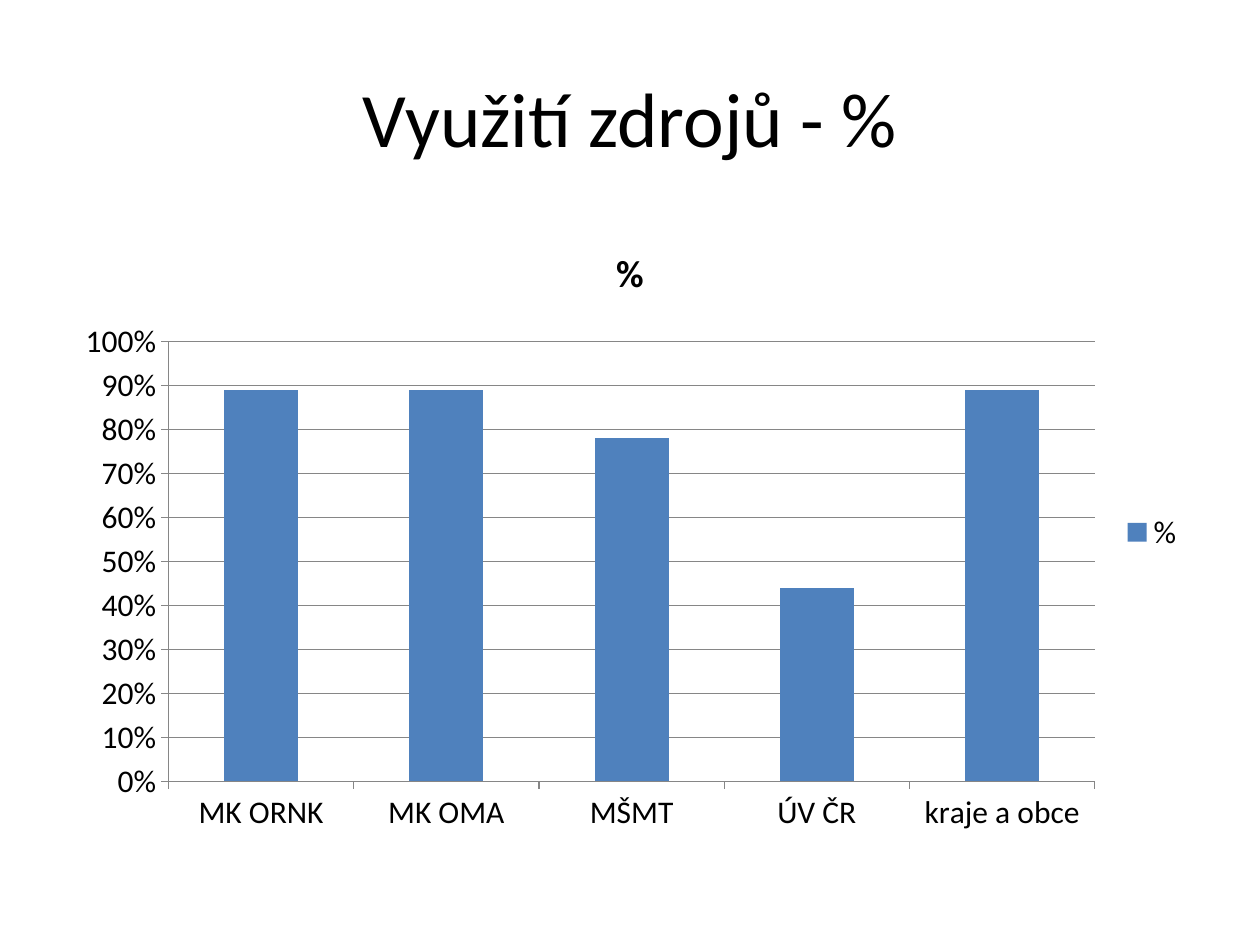
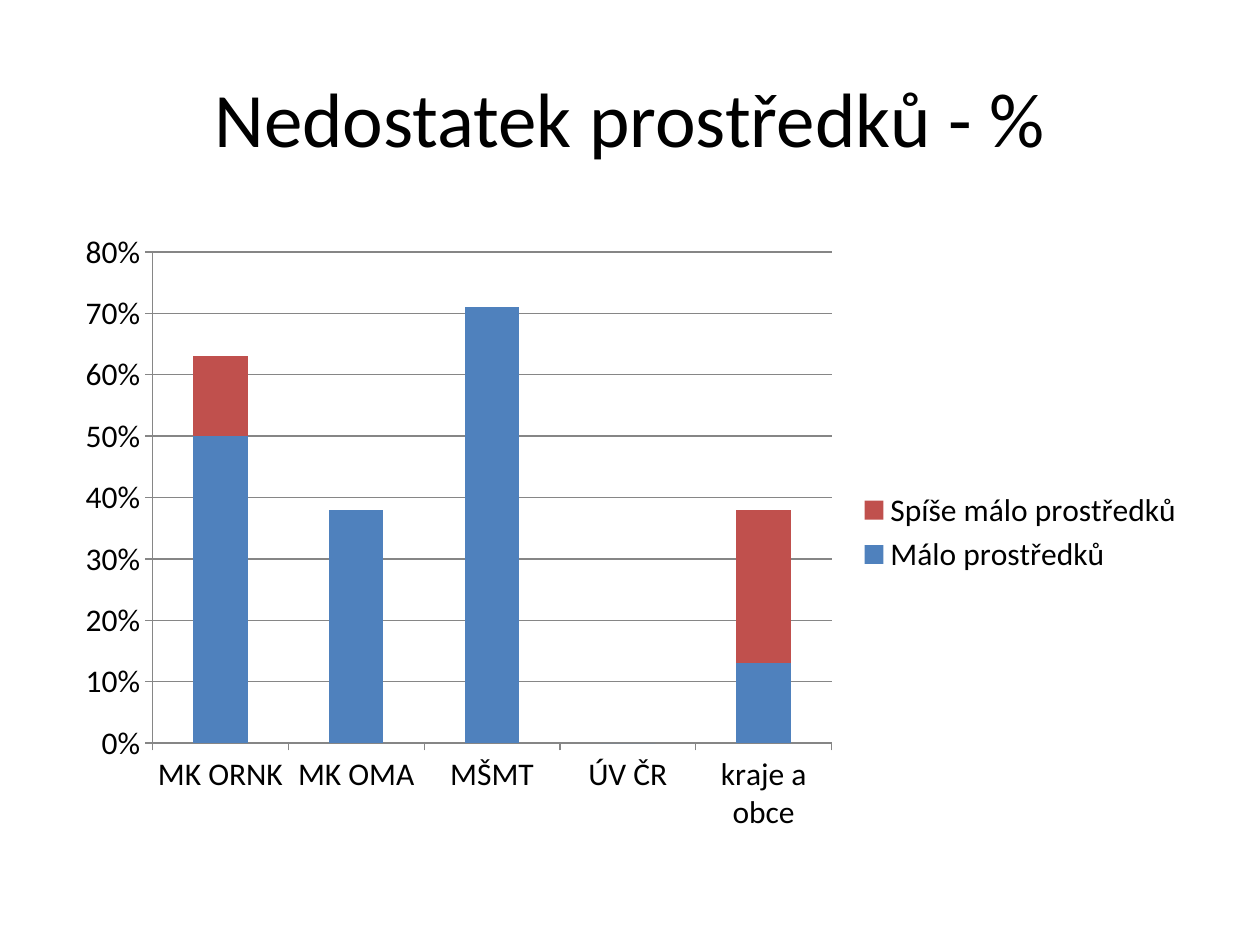
from dataclasses import dataclass
from typing import Optional

from pptx import Presentation
from pptx.chart.chart import Chart
from pptx.chart.data import CategoryChartData
from pptx.dml.color import RGBColor
from pptx.enum.chart import XL_CHART_TYPE, XL_LEGEND_POSITION, XL_TICK_MARK
from pptx.enum.text import MSO_ANCHOR, PP_ALIGN
from pptx.slide import Slide
from pptx.util import Inches, Pt

FONT = "Calibri"
BLACK = "000000"
WHITE = "FFFFFF"
BLUE = "4F81BD"
RED = "C0504D"
GRAY = "868686"
LEFT, WIDTH = Inches(0.5), Inches(9)
FUNDING_SOURCES = ["MK ORNK", "MK OMA", "MŠMT", "ÚV ČR", "kraje a obce"]


@dataclass
class Share:
    name: str
    values: list[Optional[float]]
    color: str


@dataclass
class ChartPage:
    heading: str
    shares: list[Share]
    maximum: float
    chart_title: Optional[str] = None


PAGES = [
    ChartPage(
        "Využití zdrojů - %",
        [Share("%", [0.89, 0.89, 0.78, 0.44, 0.89], BLUE)],
        maximum=1,
        chart_title="%",
    ),
    ChartPage(
        "Nedostatek prostředků - %",
        [
            Share("Málo prostředků", [0.5, 0.38, 0.71, 0, 0.13], BLUE),
            Share("Spíše málo prostředků", [0.13, None, None, None, 0.25], RED),
        ],
        maximum=0.8,
    ),
]


def rgb(color: str) -> RGBColor:
    return RGBColor.from_string(color)


def style_font(font, size: float, bold: bool = False) -> None:
    font.name = FONT
    font.size = Pt(size)
    font.bold = bold
    font.color.rgb = rgb(BLACK)


def add_heading(slide: Slide, heading: str) -> None:
    frame = slide.shapes.add_textbox(LEFT, Inches(0.3), WIDTH, Inches(1.25)).text_frame
    frame.word_wrap = True
    frame.vertical_anchor = MSO_ANCHOR.MIDDLE
    frame.text = heading
    paragraph = frame.paragraphs[0]
    paragraph.alignment = PP_ALIGN.CENTER
    style_font(paragraph.runs[0].font, 44)


def style_axes(chart: Chart, maximum: float) -> None:
    for axis in (chart.category_axis, chart.value_axis):
        axis.major_tick_mark = XL_TICK_MARK.OUTSIDE
        axis.minor_tick_mark = XL_TICK_MARK.NONE
        axis.format.line.color.rgb = rgb(GRAY)
        axis.format.line.width = Pt(0.75)
    percent_axis = chart.value_axis
    percent_axis.minimum_scale = 0
    percent_axis.maximum_scale = maximum
    percent_axis.major_unit = 0.1
    percent_axis.has_major_gridlines = True
    percent_axis.major_gridlines.format.line.color.rgb = rgb(GRAY)
    percent_axis.major_gridlines.format.line.width = Pt(0.75)
    percent_axis.tick_labels.number_format = "0%"
    percent_axis.tick_labels.number_format_is_linked = False


def add_share_chart(slide: Slide, page: ChartPage) -> None:
    data = CategoryChartData(number_format="0%")
    data.categories = FUNDING_SOURCES
    for share in page.shares:
        data.add_series(share.name, share.values)
    chart = slide.shapes.add_chart(
        XL_CHART_TYPE.COLUMN_STACKED, LEFT, Inches(1.75), WIDTH, Inches(4.95), data
    ).chart
    style_font(chart.font, 18)

    chart.has_title = page.chart_title is not None
    if page.chart_title:
        title_frame = chart.chart_title.text_frame
        title_frame.text = page.chart_title
        style_font(title_frame.paragraphs[0].runs[0].font, 21.6, bold=True)
        chart.chart_title.include_in_layout = False

    chart.has_legend = True
    chart.legend.position = XL_LEGEND_POSITION.RIGHT
    chart.legend.include_in_layout = False

    plot = chart.plots[0]
    plot.gap_width = 150
    plot.overlap = 100
    plot.vary_by_categories = False
    for series, share in zip(plot.series, page.shares):
        series.format.fill.solid()
        series.format.fill.fore_color.rgb = rgb(share.color)
    style_axes(chart, page.maximum)


def main() -> None:
    deck = Presentation()
    deck.slide_width, deck.slide_height = Inches(10), Inches(7.5)
    for page in PAGES:
        slide = deck.slides.add_slide(deck.slide_layouts[6])
        slide.background.fill.solid()
        slide.background.fill.fore_color.rgb = rgb(WHITE)
        add_heading(slide, page.heading)
        add_share_chart(slide, page)
    deck.save("out.pptx")


if __name__ == "__main__":
    main()
